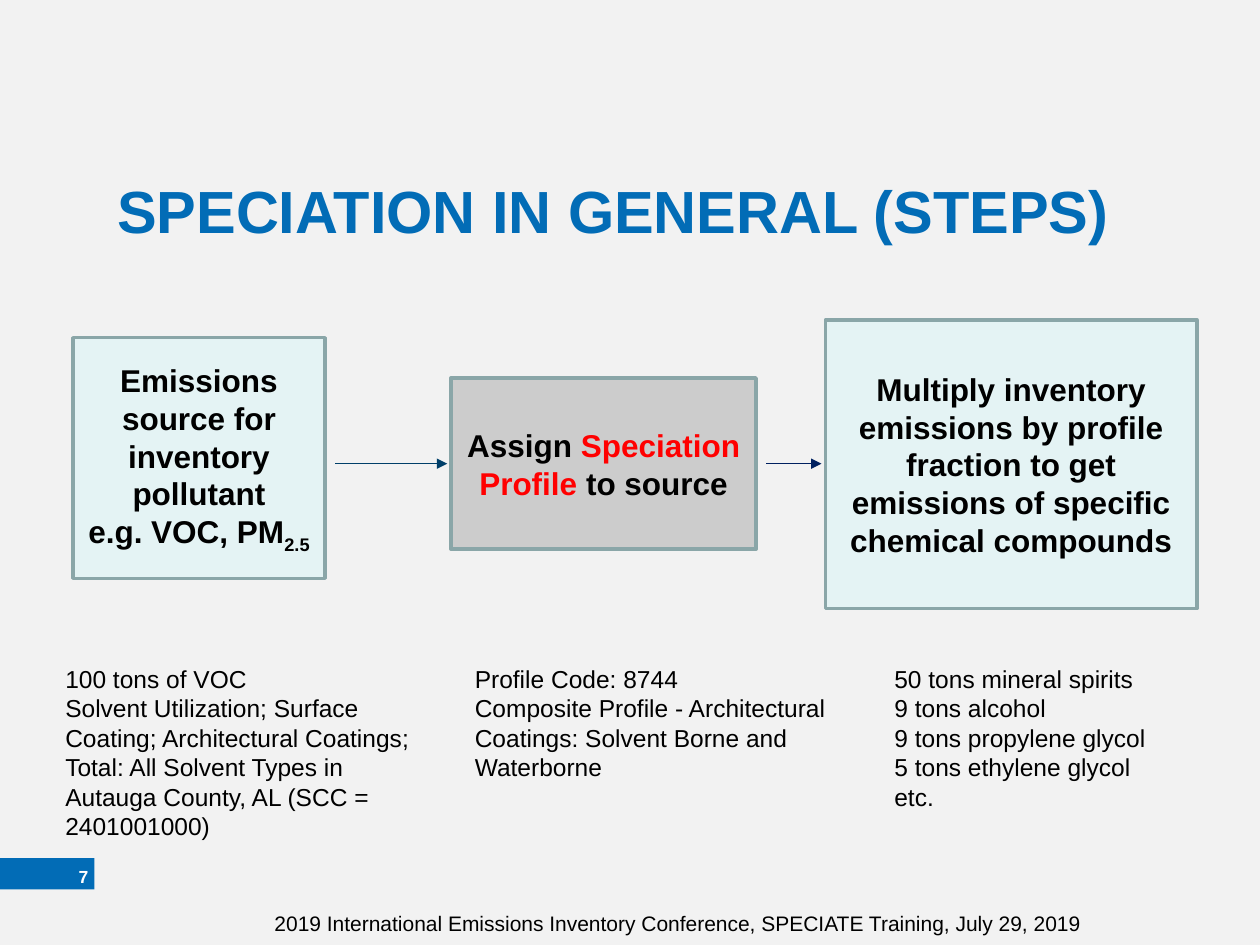
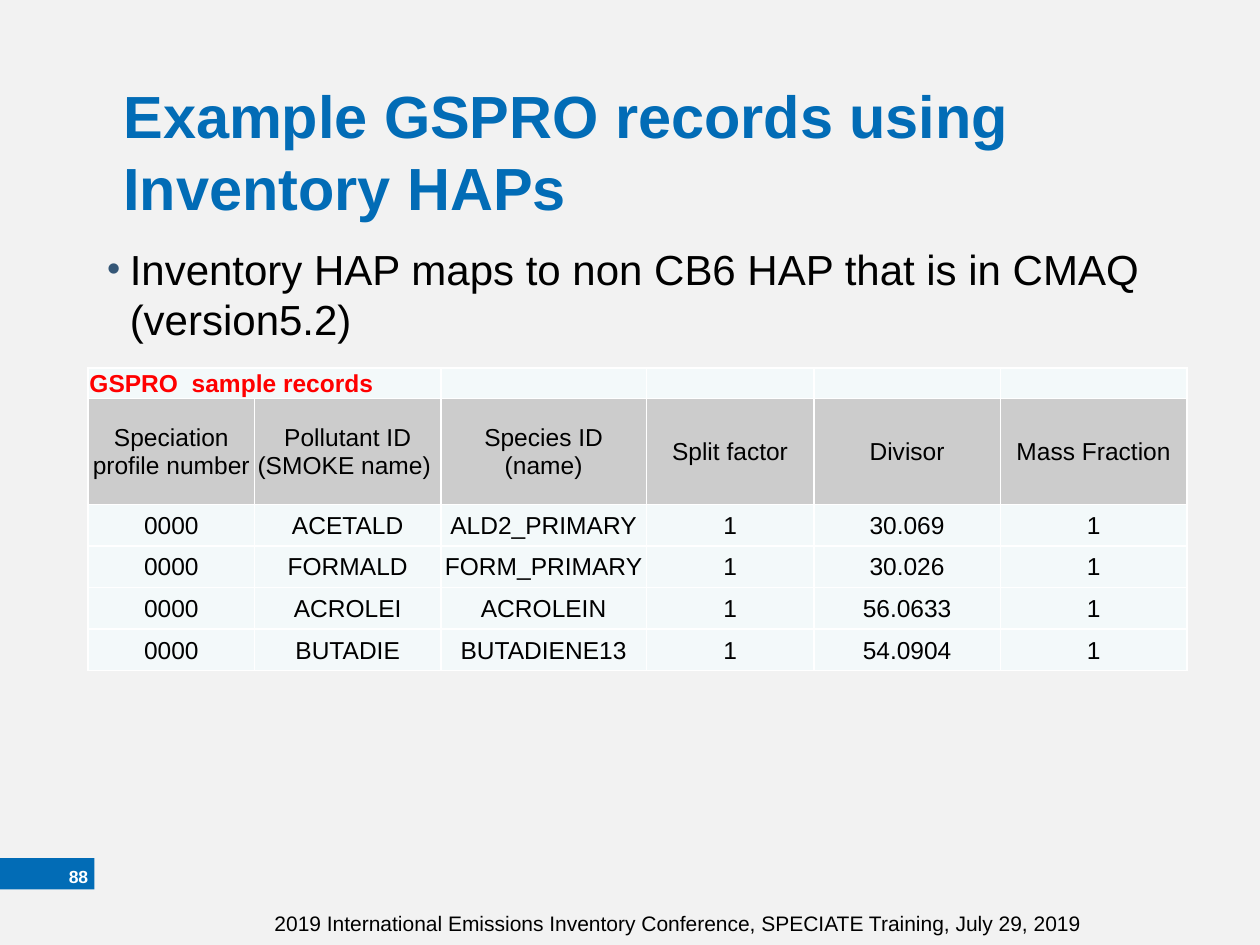
from lxml.etree import SubElement
from pptx import Presentation
from pptx.dml.color import RGBColor
from pptx.enum.shapes import MSO_CONNECTOR, MSO_SHAPE
from pptx.enum.text import MSO_ANCHOR, MSO_AUTO_SIZE, PP_ALIGN
from pptx.oxml.ns import qn
from pptx.util import Inches, Pt

# ---- Shared look ----
FONT = "Arial"
BLUE, WHITE, BLACK, RED = "026CB6", "FFFFFF", "000000", "FF0000"
PAGE, GRAY, PALE, MIST, EDGE = "F2F2F2", "CCCCCC", "E4F3F4", "F3F9FA", "8AA6A8"
FOOTER = "2019 International Emissions Inventory Conference, SPECIATE Training, July 29, 2019"
LEFT, CENTER, RIGHT = PP_ALIGN.LEFT, PP_ALIGN.CENTER, PP_ALIGN.RIGHT
NBSP = chr(160)  # no-break space

# ---- Slide 1: steps; a run is text or (text, overrides) ----
STEPS_TITLE = "SPECIATION IN GENERAL (STEPS)"
ARROW_Y = 3.68
STEPS = [  # left, top, width, height, fill, runs
    (0.58, 2.68, 2, 1.91, PALE, [f"Emissions source for inventory pollutant e.g.{NBSP}VOC, PM",
                                 ("2.5", {"baseline": -25})]),
    (3.58, 3, 2.42, 1.36, GRAY, ["Assign ", ("Speciation Profile ", {"color": RED}),
                                 "to source"]),
    (6.55, 2.54, 2.95, 2.29, PALE, ["Multiply inventory emissions by profile fraction "
                                    "to get emissions of specific chemical compounds"]),
]
ARROW_COLORS = ["003F69", "002060"]
EXAMPLES = [  # left, width, lines
    (0.42, 3.17, ["100 tons of VOC",
                  "Solvent Utilization; Surface Coating; Architectural Coatings; Total: "
                  "All Solvent Types in Autauga County, AL (SCC = 2401001000)"]),
    (3.67, 3, ["Profile Code: 8744",
               "Composite Profile - Architectural Coatings: Solvent Borne and Waterborne"]),
    (7, 2.33, ["50 tons mineral spirits", "9 tons alcohol", "9 tons propylene glycol",
               "5 tons ethylene glycol", "etc."]),
]

# ---- Slide 2: records ----
RECORDS_TITLE = "Example GSPRO records using Inventory HAPs"
BULLET = "Inventory HAP maps to non CB6 HAP that is in CMAQ (version5.2)"
CAPTION = "GSPRO  sample records"
COLUMNS = [("Speciation profile number", 1.32), (f"Pollutant ID (SMOKE name){NBSP}", 1.48),
           ("Species ID (name)", 1.63), ("Split factor", 1.33),
           ("Divisor", 1.48), ("Mass Fraction", 1.48)]
RECORDS = [
    ("0000", "ACETALD", "ALD2_PRIMARY", "1", "30.069", "1"),
    ("0000", "FORMALD", "FORM_PRIMARY", "1", "30.026", "1"),
    ("0000", "ACROLEI", "ACROLEIN", "1", "56.0633", "1"),
    ("0000", "BUTADIE", "BUTADIENE13", "1", "54.0904", "1"),
]
CAPTION_H, HEADER_H, RECORD_H = 0.23, 0.84, 0.33


def rgb(color):
    return RGBColor.from_string(color)


def box(*lengths):
    return [Inches(v) for v in lengths]


def write(tf, paragraphs, size=14, color=BLACK, bold=False, align=LEFT,
          anchor=MSO_ANCHOR.TOP):
    """Fill a text frame; each paragraph is a string or a list of runs."""
    tf.word_wrap = True
    tf.vertical_anchor = anchor
    for i, runs in enumerate(paragraphs):
        p = tf.paragraphs[0] if i == 0 else tf.add_paragraph()
        p.alignment, p.line_spacing, p.space_before = align, 1.0, Pt(0)
        for run in [runs] if isinstance(runs, str) else runs:
            text, extra = (run, {}) if isinstance(run, str) else run
            r = p.add_run()
            r.text = text
            r.font.name, r.font.size, r.font.bold = FONT, Pt(size), bold
            r.font.color.rgb = rgb(extra.get("color", color))
            if "baseline" in extra:
                r.font._element.set("baseline", str(extra["baseline"] * 1000))


def add_text(s, at, paragraphs, margin=None, **fmt):
    tf = s.shapes.add_textbox(*box(*at)).text_frame
    if margin is not None:
        tf.margin_left = tf.margin_right = tf.margin_top = tf.margin_bottom = Inches(margin)
    write(tf, paragraphs, **fmt)


def add_rect(s, at, fill, line=None):
    sp = s.shapes.add_shape(MSO_SHAPE.RECTANGLE, *box(*at))
    sp.shadow.inherit = False
    sp.fill.solid()
    sp.fill.fore_color.rgb = rgb(fill)
    if line:
        sp.line.color.rgb = rgb(line)
        sp.line.width = Pt(2)
    else:
        sp.line.fill.background()
    return sp


def add_arrow(s, x1, x2, y, color):
    cn = s.shapes.add_connector(MSO_CONNECTOR.STRAIGHT, *box(x1, y, x2, y))
    cn.line.color.rgb = rgb(color)
    cn.line.width = Pt(0.75)
    SubElement(cn.line._get_or_add_ln(), qn("a:tailEnd"), type="triangle")
    SubElement(cn._element.spPr, qn("a:effectLst"))


def place(sp, at):
    sp.left, sp.top, sp.width, sp.height = box(*at)
    sp.text_frame.auto_size = MSO_AUTO_SIZE.NONE


def add_slide(prs, layout, title, left, top, number):
    """Start a slide with its title, number band and footer."""
    s = prs.slides.add_slide(prs.slide_layouts[layout])
    place(s.shapes.title, (left, top, 8.33, 1.08))
    write(s.shapes.title.text_frame, [title], size=34, color=BLUE, bold=True)
    add_rect(s, (0, 6.81, 0.75, 0.25), BLUE)
    add_text(s, (0.03, 6.83, 0.67, 0.25), [number], margin=0, size=10, color=WHITE,
             bold=True, align=RIGHT, anchor=MSO_ANCHOR.MIDDLE)
    add_text(s, (2.08, 7.18, 6.75, 0.5), [FOOTER], size=12)
    return s


def add_bullet(p):
    pPr = p._p.get_or_add_pPr()
    pPr.set("marL", str(Inches(0.18)))
    pPr.set("indent", str(-Inches(0.18)))
    SubElement(SubElement(pPr, qn("a:buClr")), qn("a:srgbClr"), val="355777")
    SubElement(pPr, qn("a:buSzPct"), val="90000")
    SubElement(pPr, qn("a:buFont"), typeface=FONT)
    SubElement(pPr, qn("a:buChar"), char="•")


def fill_cell(cell, text, fill, **fmt):
    cell.margin_left = cell.margin_right = cell.margin_top = Inches(0.01)
    cell.margin_bottom = 0
    cell.vertical_anchor = MSO_ANCHOR.MIDDLE
    tcPr = cell._tc.get_or_add_tcPr()
    for side in ("a:lnL", "a:lnR", "a:lnT", "a:lnB"):
        ln = SubElement(tcPr, qn(side), w=str(Pt(1)))
        SubElement(SubElement(ln, qn("a:solidFill")), qn("a:srgbClr"), val=WHITE)
    cell.fill.solid()
    cell.fill.fore_color.rgb = rgb(fill)
    if text:
        write(cell.text_frame, [text], anchor=None, **fmt)
    else:  # keep empty cells as low as the caption
        SubElement(cell.text_frame.paragraphs[0]._p, qn("a:endParaRPr"), sz="1400")


def steps_slide(prs):
    s = add_slide(prs, 5, STEPS_TITLE, 0.83, 1.33, "7")
    # Step boxes
    for left, top, width, height, fill, runs in STEPS:
        sp = add_rect(s, (left, top, width, height), fill, EDGE)
        write(sp.text_frame, [runs], size=18, bold=True, align=CENTER, anchor=MSO_ANCHOR.MIDDLE)
    # Arrows across the gaps
    for step, following, color in zip(STEPS, STEPS[1:], ARROW_COLORS):
        add_arrow(s, step[0] + step[2] + 0.08, following[0] - 0.03, ARROW_Y, color)
    # Worked example under each step
    for left, width, lines in EXAMPLES:
        add_text(s, (left, 5.22, width, 1.28), lines)


def records_slide(prs):
    s = add_slide(prs, 1, RECORDS_TITLE, 0.88, 0.58, "88")
    body = s.placeholders[1]
    place(body, (0.75, 1.88, 8.5, 3.75))
    add_bullet(body.text_frame.paragraphs[0])
    write(body.text_frame, [BULLET], size=24)
    # Records table
    names, widths = zip(*COLUMNS)
    heights = [CAPTION_H, HEADER_H] + [RECORD_H] * len(RECORDS)
    table = s.shapes.add_table(len(heights), len(widths),
                               *box(0.7, 2.92, sum(widths), sum(heights))).table
    table.first_row = table.horz_banding = False
    for column, width in zip(table.columns, widths):
        column.width = Inches(width)
    for row, height in zip(table.rows, heights):
        row.height = Inches(height)
    table.cell(0, 0).merge(table.cell(0, 1))
    for c in range(len(names)):
        fill_cell(table.cell(0, c), "" if c else CAPTION, MIST, color=RED, bold=True)
    for r, values in enumerate([names] + RECORDS, 1):
        for c, value in enumerate(values):
            fill_cell(table.cell(r, c), value, GRAY if r == 1 else MIST, align=CENTER)


def main():
    prs = Presentation()
    prs.slide_width, prs.slide_height = box(10, 7.5)
    background = prs.slide_master.background.fill
    background.solid()
    background.fore_color.rgb = rgb(PAGE)
    steps_slide(prs)
    records_slide(prs)
    prs.save("out.pptx")


if __name__ == "__main__":
    main()
